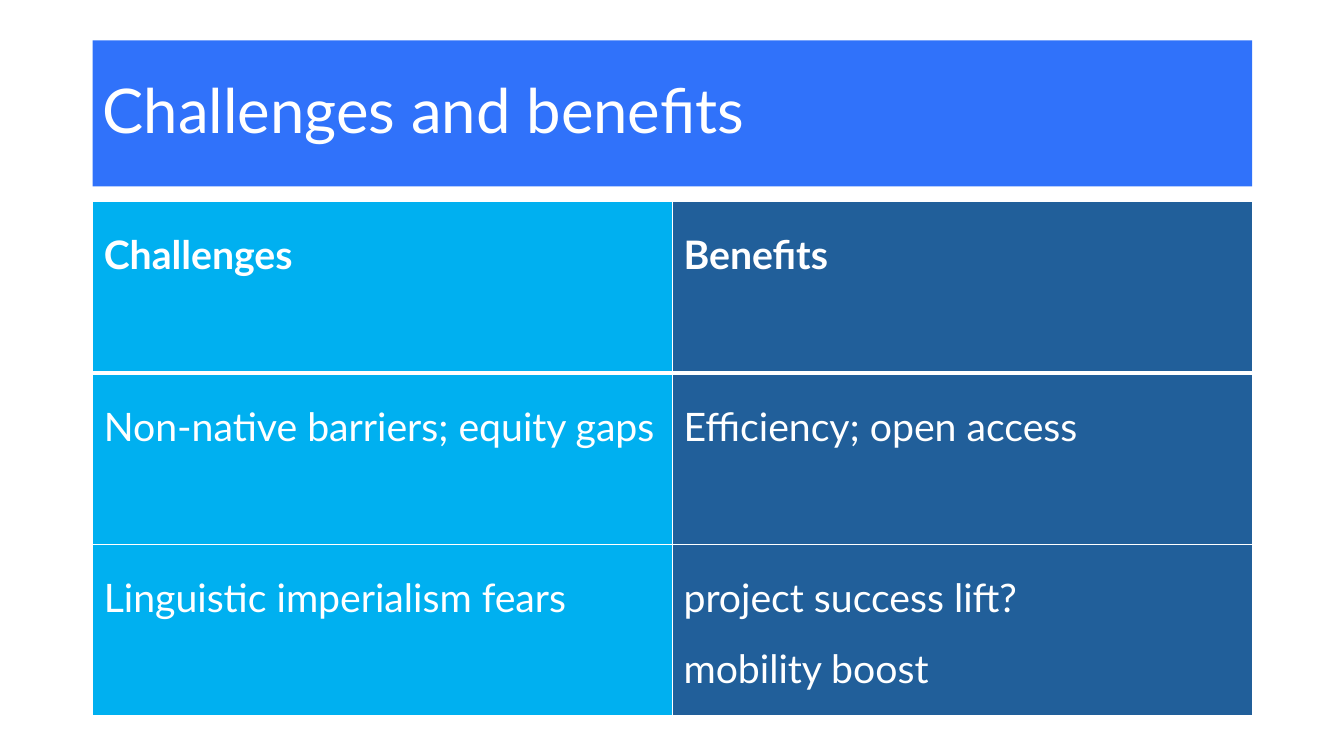
from lxml.etree import SubElement as Sub
from pptx import Presentation
from pptx.dml.color import RGBColor as Rgb
from pptx.enum.shapes import MSO_SHAPE as Shape
from pptx.enum.text import MSO_ANCHOR as Anchor, PP_ALIGN as Align
from pptx.oxml.ns import qn
from pptx.util import Inches, Pt

HUES = {"title": "3072FA", "left": "00B0F0", "right": "215F9A", "white": "FFFFFF"}
FONT = "Lato"
ROWS = [
    ("Challenges", "Benefits"),
    ("Non-native barriers; equity gaps", "Efficiency; open access"),
    ("Linguistic imperialism fears", "project success lift?\nmobility boost"),
]
LEFT, WIDTH, HIGH = 0.92, 11.5, 1.7


def paint(fill, hue):
    """Give a fill one solid colour."""
    fill.solid()
    fill.fore_color.rgb = Rgb.from_string(HUES[hue])


def write(frame, text, size, lead, bold=False):
    """Write one left-aligned paragraph, with line breaks where the text has them."""
    para = frame.paragraphs[0]
    para.alignment = Align.LEFT
    para.line_spacing = lead
    for i, line in enumerate(text.split("\n")):
        if i:
            para.add_line_break()
        run = para.add_run()
        run.text = line
        font = run.font
        font.name, font.size, font.bold = FONT, Pt(size), bold
        font.color.rgb = Rgb.from_string(HUES["white"])
    return para


def edge(cell, side, width):
    """Draw a white border on one side of a cell."""
    line = Sub(cell._tc.get_or_add_tcPr(), qn(f"a:ln{side}"), w=str(Pt(width)))
    fill = Sub(line, qn("a:solidFill"))
    Sub(fill, qn("a:srgbClr"), val=HUES["white"])


def add_title(slide, text):
    """Add the title bar."""
    bar = slide.shapes.add_shape(
        Shape.RECTANGLE, Inches(LEFT), Inches(0.4), Inches(WIDTH), Inches(1.45))
    bar.shadow.inherit = False
    bar.line.fill.background()
    paint(bar.fill, "title")
    frame = bar.text_frame
    frame.word_wrap = True
    frame.vertical_anchor = Anchor.MIDDLE
    write(frame, text, 44, 0.9)


def fill_cell(cell, text, row, hue):
    """Set the borders, fill and text of one cell."""
    cell.margin_left = cell.margin_right = Inches(0.11)
    cell.margin_top = cell.margin_bottom = Inches(0.06)
    cell.vertical_anchor = Anchor.TOP
    for side in "LRTB":
        thick = (row, side) in ((0, "B"), (1, "T"))
        edge(cell, side, 3 if thick else 1)
    paint(cell.fill, hue)
    para = write(cell.text_frame, text, 28, 1.5, row == 0)
    para.space_after = Pt(6)


def add_grid(slide, rows):
    """Add the table that sets challenges beside benefits."""
    grid = slide.shapes.add_table(
        len(rows), 2, Inches(LEFT), Inches(2), Inches(WIDTH),
        Inches(HIGH * len(rows))).table
    grid.horz_banding = False
    for col in grid.columns:
        col.width = Inches(WIDTH / 2)
    for r, texts in enumerate(rows):
        grid.rows[r].height = Inches(HIGH)
        for c, (text, hue) in enumerate(zip(texts, ("left", "right"))):
            fill_cell(grid.cell(r, c), text, r, hue)


def main():
    """Build and save the slide."""
    deck = Presentation()
    deck.slide_width, deck.slide_height = Inches(13.33), Inches(7.5)
    slide = deck.slides.add_slide(deck.slide_layouts[6])
    add_title(slide, "Challenges and benefits")
    add_grid(slide, ROWS)
    deck.save("out.pptx")


if __name__ == "__main__":
    main()
